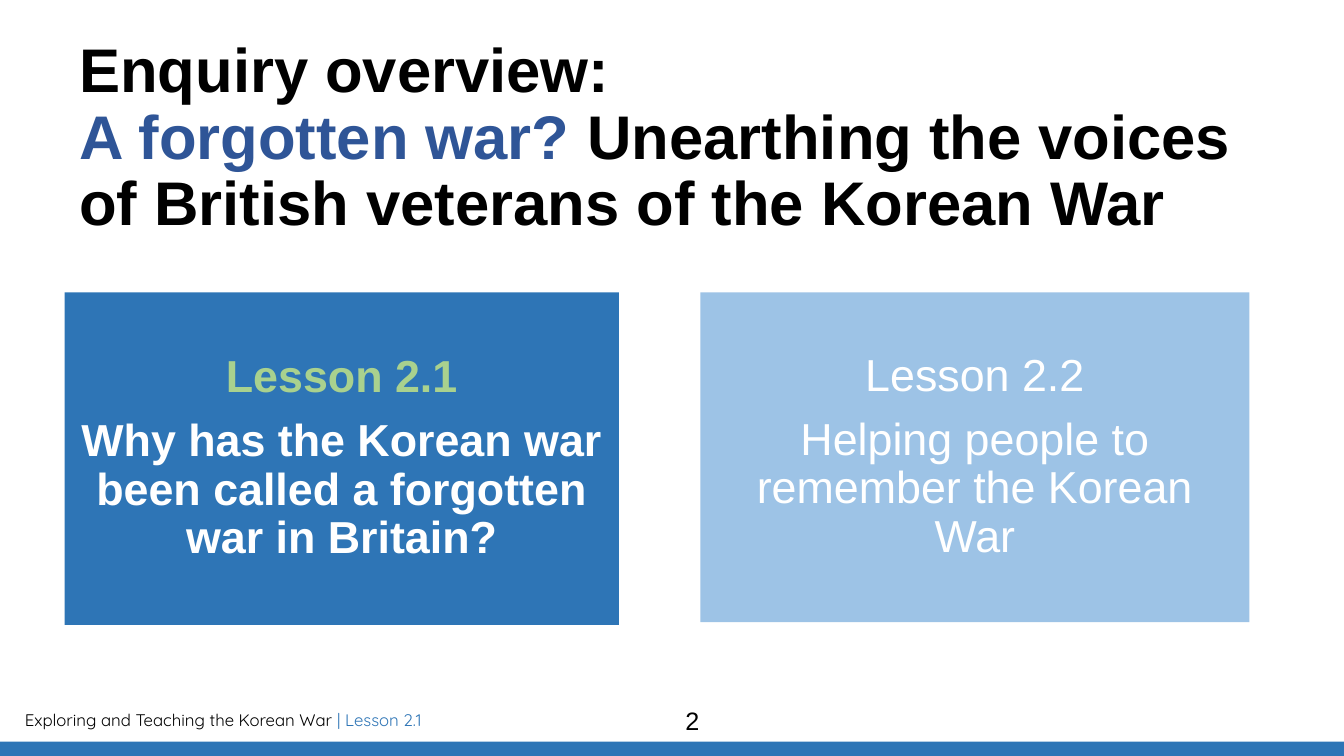
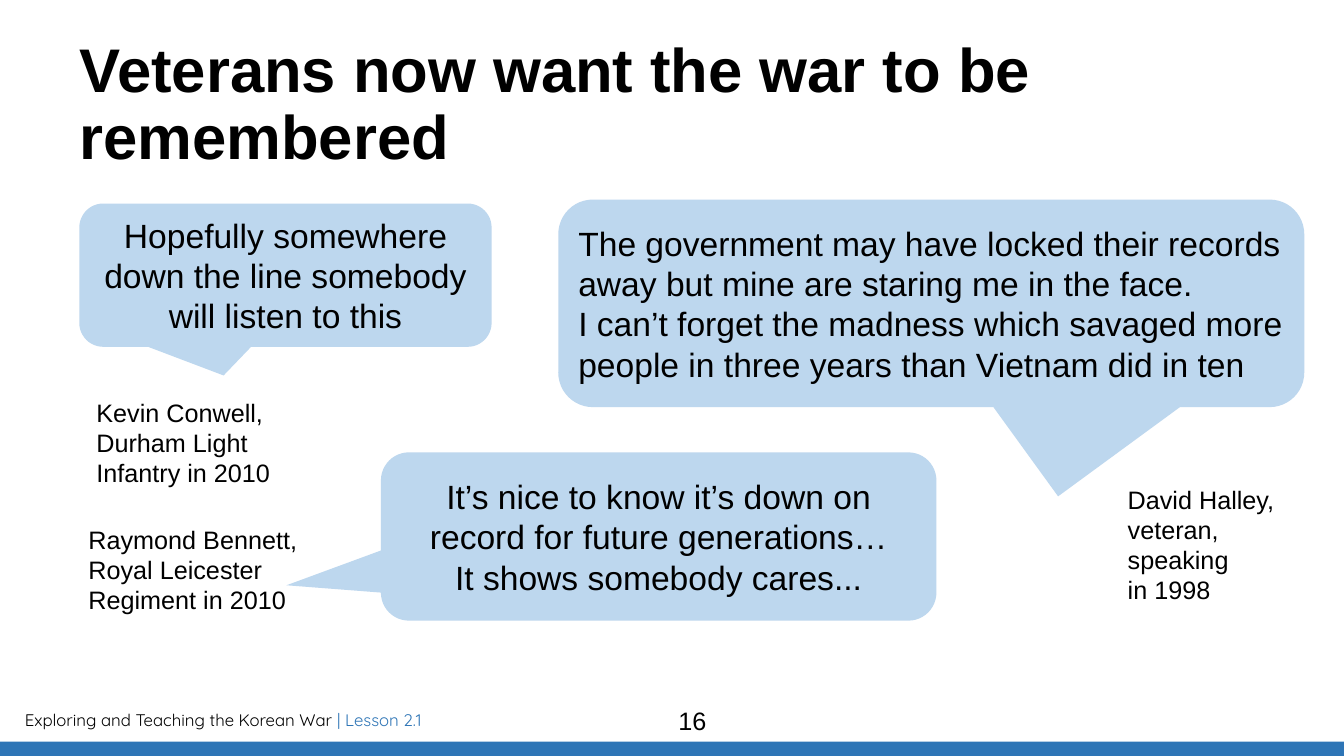
import pptx
import pptx.util
import pptx.dml.color
import pptx.enum.shapes
import pptx.enum.text

Cm, Pt = pptx.util.Cm, pptx.util.Pt
Shape = pptx.enum.shapes.MSO_SHAPE
Align = pptx.enum.text.PP_ALIGN
Anchor = pptx.enum.text.MSO_ANCHOR

# Shared look
WIDE, HIGH = 33.87, 19.05
BAND = 0.36
BLACK, WHITE = "000000", "FFFFFF"
BLUE, NAVY, SKY, PALE, GREEN = "2E75B6", "2F5597", "9DC3E6", "BDD7EE", "A9D18E"


def paint(target, color):
    """Set a fill or a font to a hex colour."""
    if hasattr(target, "solid"):
        target.solid()
        target.fore_color.rgb = pptx.dml.color.RGBColor.from_string(color)
    else:
        target.color.rgb = pptx.dml.color.RGBColor.from_string(color)


def place(shape, area):
    shape.left, shape.top, shape.width, shape.height = map(Cm, area)


def write(para, parts, size, color=BLACK, bold=False, align=Align.LEFT, face="Arial"):
    """Fill a paragraph with (text, colour) parts; newlines become line breaks."""
    para.alignment = align
    font = para.font
    font.name, font.size, font.bold = face, Pt(size), bold
    paint(font, color)
    for text, tint in parts:
        for row, line in enumerate(text.split("\n")):
            if row:
                para.add_line_break()
            if line:
                run = para.add_run()
                run.text = line
                if tint != color:
                    paint(run.font, tint)


def label(slide, area, parts, size, **style):
    box = slide.shapes.add_textbox(*map(Cm, area))
    box.text_frame.word_wrap = True
    write(box.text_frame.paragraphs[0], parts, size, **style)


def block(slide, kind, area, color):
    shape = slide.shapes.add_shape(kind, *map(Cm, area))
    shape.shadow.inherit = False
    paint(shape.fill, color)
    shape.line.fill.background()
    shape.text_frame.word_wrap = True
    shape.text_frame.vertical_anchor = Anchor.MIDDLE
    return shape


def start(deck, parts, number):
    """Add a slide with its title, footer, band and page number."""
    slide = deck.slides.add_slide(deck.slide_layouts.get_by_name("Title Only"))
    label(slide, (0.38, 17.75, 19.86, 0.76),
          [("Exploring and Teaching the Korean War ", BLACK), ("| Lesson 2.1", BLUE)],
          12, face="Quicksand")
    block(slide, Shape.RECTANGLE, (0, HIGH - BAND, WIDE, BAND), BLUE)
    title = slide.shapes.title
    place(title, (2, 1, 29.2, 3.68))
    frame = title.text_frame
    frame.margin_left = frame.margin_top = frame.margin_right = frame.margin_bottom = 0
    frame.vertical_anchor = Anchor.TOP
    frame.auto_size = pptx.enum.text.MSO_AUTO_SIZE.NONE
    frame.word_wrap = True
    para = frame.paragraphs[0]
    para.line_spacing = 0.9
    write(para, parts, 44, bold=True)
    label(slide, (11, 17.65, 12.9, 1.02), [(str(number), BLACK)], 18, align=Align.CENTER)
    return slide


def lesson(slide, area, fill, name, topic, tint=WHITE, bold=False):
    frame = block(slide, Shape.RECTANGLE, area, fill).text_frame
    pad = Cm(0.36)
    frame.margin_left = frame.margin_top = frame.margin_right = frame.margin_bottom = pad
    for para, text, color in ((frame.paragraphs[0], name, tint),
                              (frame.add_paragraph(), topic, WHITE)):
        para.line_spacing = 0.9
        para.space_after = Pt(11)
        write(para, [(text, color)], 32, color=color, bold=bold, align=Align.CENTER)


def quote(slide, area, tail, text, align=Align.CENTER):
    """Add a speech bubble; tail is its tip relative to the centre."""
    bubble = block(slide, Shape.ROUNDED_RECTANGULAR_CALLOUT, area, PALE)
    bubble.adjustments[0], bubble.adjustments[1] = tail
    write(bubble.text_frame.paragraphs[0], [(text, BLACK)], 24, align=align)


def main():
    deck = pptx.Presentation()
    deck.slide_width, deck.slide_height = Cm(WIDE), Cm(HIGH)

    # Enquiry overview
    slide = start(deck, [
        ("Enquiry overview:\n", BLACK),
        ("A forgotten war? ", NAVY),
        ("Unearthing the voices of British veterans of the Korean War", BLACK)], 2)
    lesson(slide, (17.65, 7.37, 13.84, 8.31), SKY, "Lesson 2.2",
           "Helping people to remember the Korean War")
    lesson(slide, (1.63, 7.37, 13.97, 8.38), BLUE, "Lesson 2.1",
           "Why has the Korean war been called a forgotten war in Britain?",
           tint=GREEN, bold=True)

    # Veterans' voices
    slide = start(deck, [("Veterans now want the war to be remembered", BLACK)], 16)
    for area, text in (
            ((1.98, 13.08, 7.2, 2.57), "Raymond Bennett, Royal Leicester Regiment in 2010"),
            ((28.17, 12.07, 4.72, 3.33), "David Halley, veteran, speaking\nin 1998"),
            ((2.18, 9.88, 5, 2.57), "Kevin Conwell, Durham Light Infantry in 2010")):
        label(slide, area, [(text, BLACK)], 18)
    quote(slide, (2, 5.13, 10.39, 3.61), (-0.15, 0.7),
          "Hopefully somewhere down the line somebody will listen to this")
    quote(slide, (9.6, 11.4, 14, 4.24), (-0.67, 0.29),
          "It’s nice to know it’s down on record for future generations…\n"
          "It shows somebody cares...")
    quote(slide, (14.07, 5.03, 18.8, 5.23), (0.17, 0.93),
          "The government may have locked their records away but mine are "
          "staring me in the face.\nI can’t forget the madness which savaged more "
          "people in three years than Vietnam did in ten", align=Align.LEFT)

    deck.save("out.pptx")


if __name__ == "__main__":
    main()
